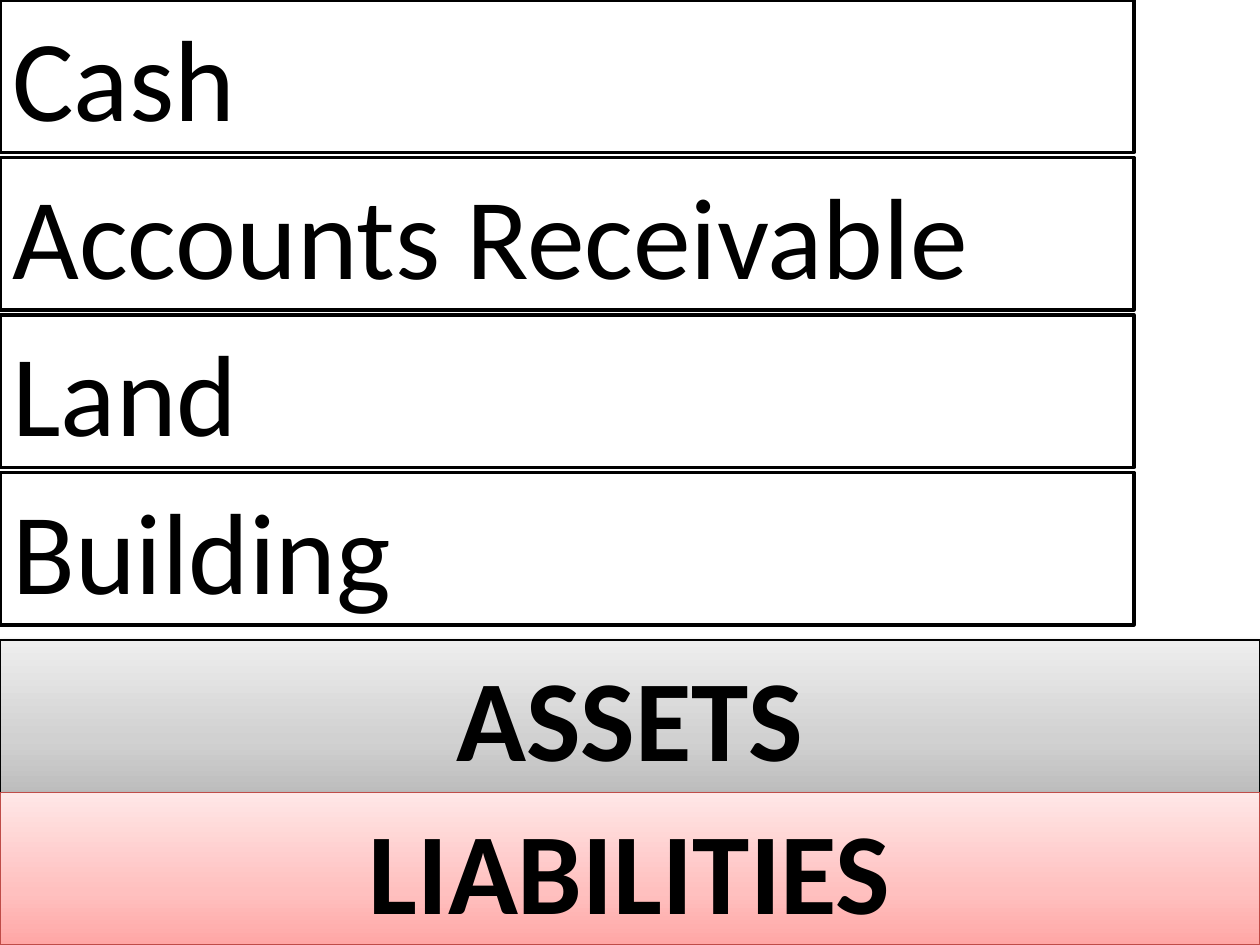
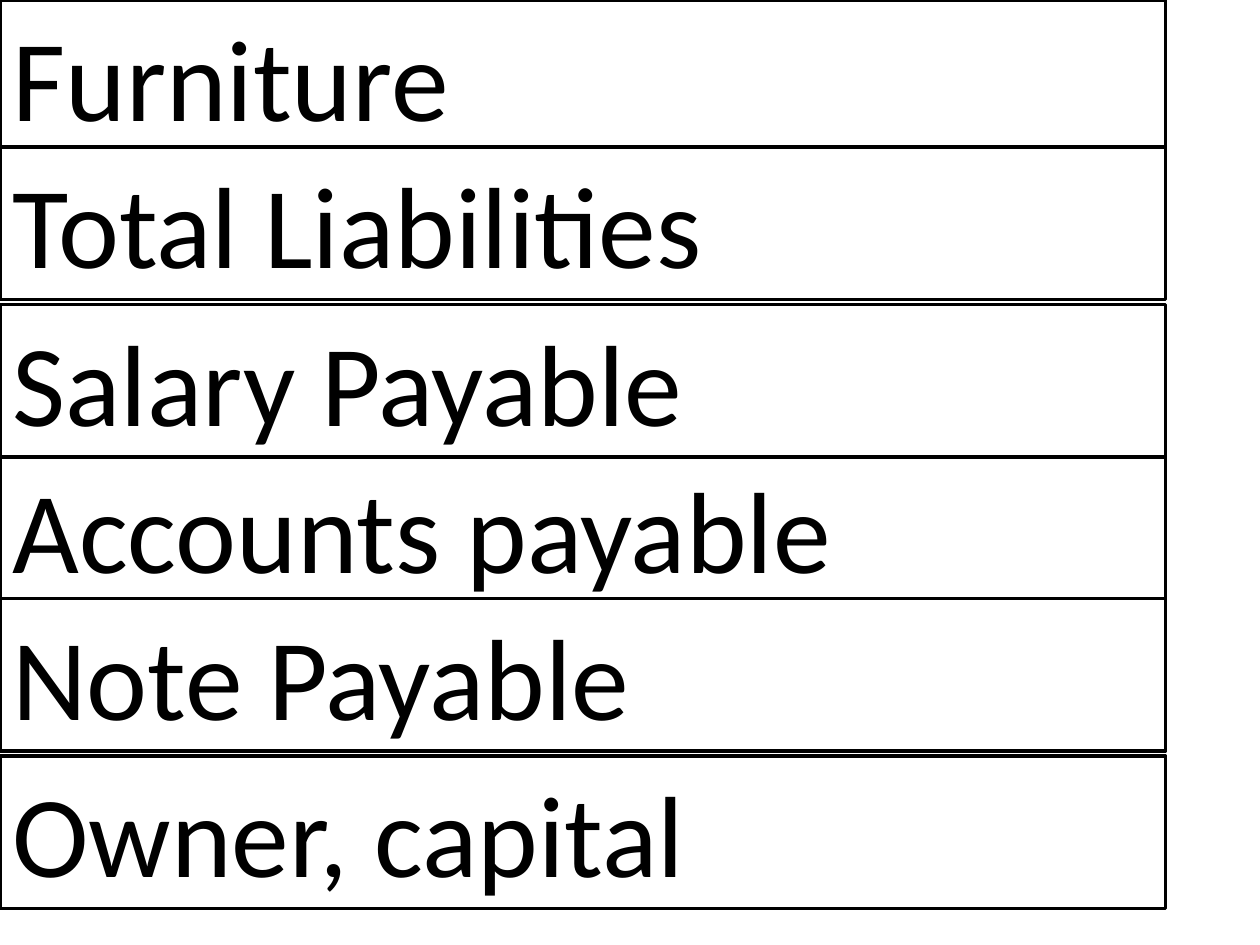
"""Build two slides of stacked accounting term cards with category bands."""
from copy import deepcopy

from lxml.etree import SubElement
from pptx import Presentation
from pptx.dml.color import RGBColor
from pptx.enum.text import MSO_ANCHOR, MSO_AUTO_SIZE, PP_ALIGN
from pptx.oxml.ns import qn
from pptx.util import Pt

BLACK = "000000"
WHITE = "FFFFFF"
CARD_HEIGHT = 87.12
SLIDE_WIDTH = 720
SLIDE_HEIGHT = 540


def color(hex_string):
    return RGBColor.from_string(hex_string)


def add_card(slide, text, top, width, line_color, line_width, alignment, bold=False):
    shape = slide.shapes.add_textbox(Pt(0), Pt(top), Pt(width), Pt(CARD_HEIGHT))
    shape.shadow.inherit = False
    shape.fill.solid()
    shape.fill.fore_color.rgb = color(WHITE)
    shape.line.color.rgb = color(line_color)
    shape.line.width = Pt(line_width)
    frame = shape.text_frame
    frame.word_wrap = True
    frame.auto_size = MSO_AUTO_SIZE.SHAPE_TO_FIT_TEXT
    frame.vertical_anchor = MSO_ANCHOR.TOP
    paragraph = frame.paragraphs[0]
    paragraph.text = text
    paragraph.alignment = alignment
    paragraph.font.name = "Calibri"
    paragraph.font.size = Pt(66)
    paragraph.font.bold = bold
    paragraph.font.color.rgb = color(BLACK)
    return shape


presentation = Presentation()
presentation.slide_width = Pt(SLIDE_WIDTH)
presentation.slide_height = Pt(SLIDE_HEIGHT)
blank_layout = presentation.slide_layouts[6]

category_slide = presentation.slides.add_slide(blank_layout)
bands = [
    ("ASSETS", BLACK, ("BDBDBD", "D1D1D1", "EEEEEE")),
    ("LIABILITIES", "BF4C48", ("FFA6A5", "FFC0BF", "FFE7E7")),
]
for index, (category, line_color, gradient_colors) in enumerate(bands):
    top = SLIDE_HEIGHT - (len(bands) - index) * CARD_HEIGHT
    band = add_card(category_slide, category, top, SLIDE_WIDTH, line_color, 0.75,
                    PP_ALIGN.CENTER, bold=True)
    band.fill.gradient()
    band.fill.gradient_angle = 90
    properties = band.element.spPr
    stop_list = properties.find(qn("a:gradFill")).find(qn("a:gsLst"))
    stop_list.append(deepcopy(stop_list[0]))
    for stop, position, stop_color in zip(band.fill.gradient_stops, (0, 0.35, 1), gradient_colors):
        stop.position = position
        stop.color.rgb = color(stop_color)
    shadow = SubElement(properties.find(qn("a:effectLst")), qn("a:outerShdw"),
                        blurRad=str(Pt(3.1)), dist=str(Pt(1.6)), dir="5400000", rotWithShape="0")
    shadow_color = SubElement(shadow, qn("a:srgbClr"), val=BLACK)
    SubElement(shadow_color, qn("a:alpha"), val="38000")

for index, account in enumerate(["Cash", "Accounts Receivable", "Land", "Building"]):
    add_card(category_slide, account, index * 90, 648, BLACK, 2, PP_ALIGN.LEFT)

account_slide = presentation.slides.add_slide(blank_layout)
accounts = [
    ("Furniture", 0),
    ("Accounts payable", 258),
    ("Note Payable", 342),
    ("Salary Payable", 174),
    ("Total Liabilities", 84),
    ("Owner, capital", 432),
]
for account, top in accounts:
    add_card(account_slide, account, top, 666, BLACK, 2, PP_ALIGN.LEFT)

presentation.save("out.pptx")
